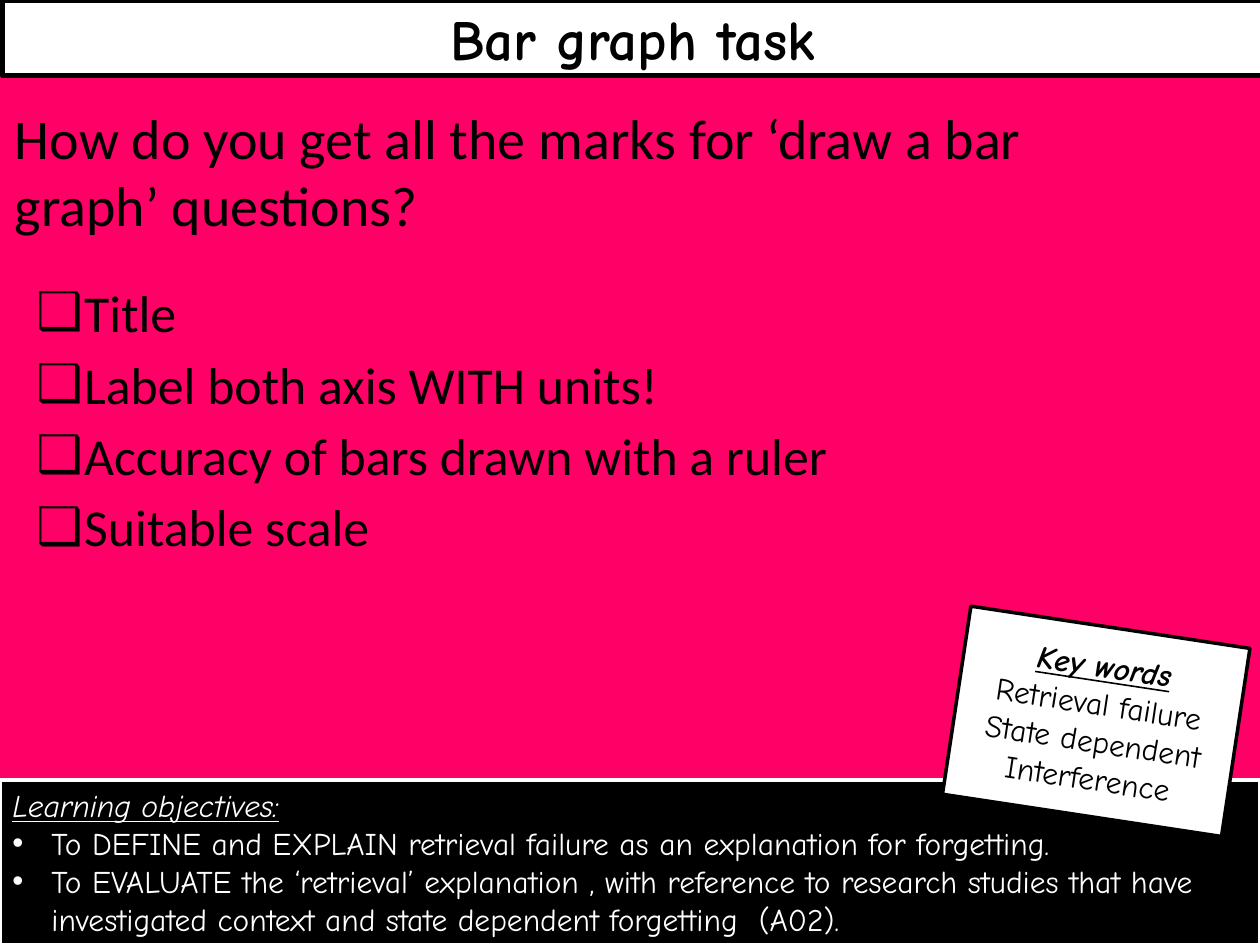
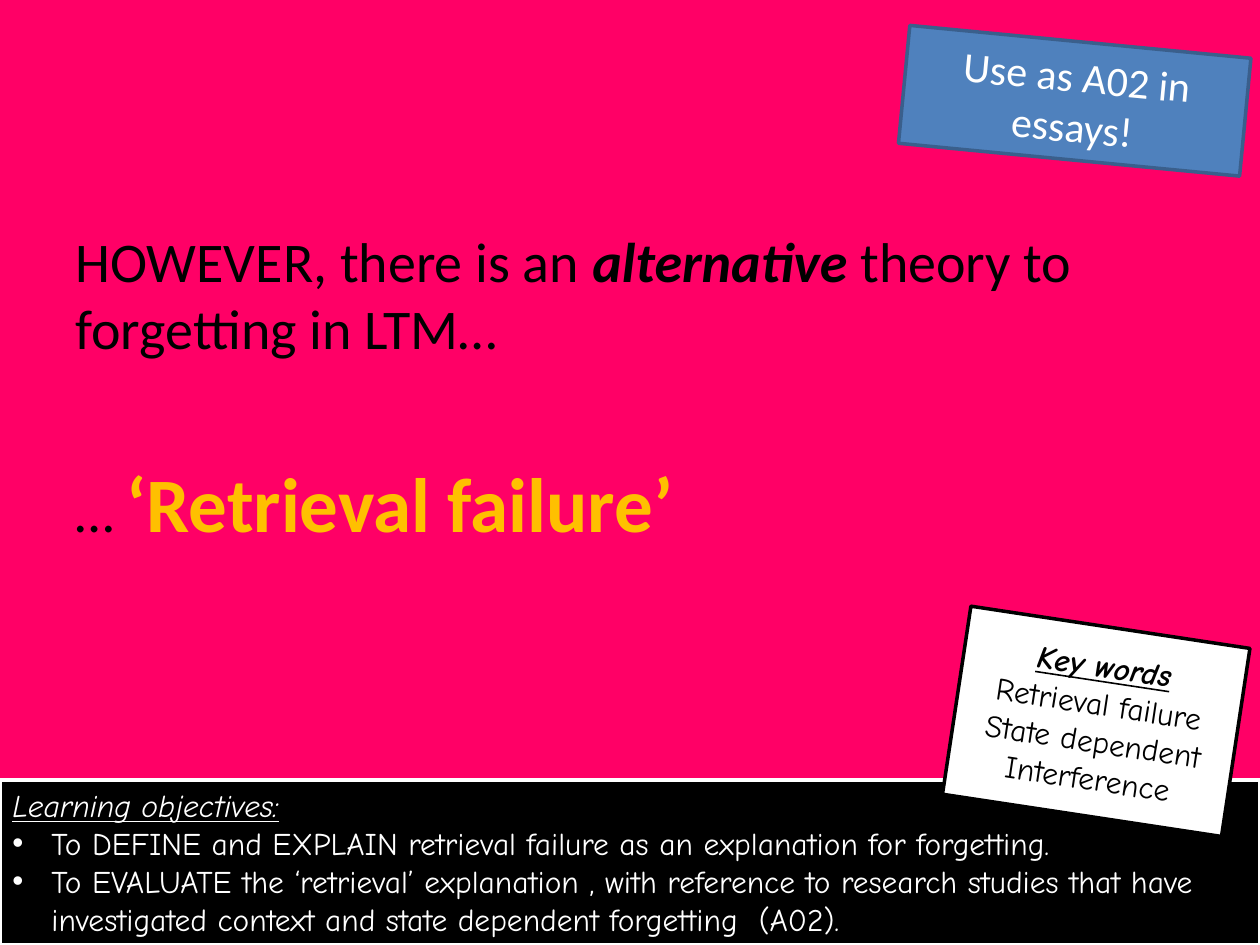
from lxml import etree
from pptx import Presentation
from pptx import util as u
from pptx.dml.color import RGBColor
from pptx.enum import shapes, text
from pptx.oxml.ns import qn

PX = 9144  # EMU in one px: 100 px to the inch

PINK = RGBColor(0xFF, 0x00, 0x66)
BLACK = RGBColor(0x00, 0x00, 0x00)
WHITE = RGBColor(0xFF, 0xFF, 0xFF)
AMBER = RGBColor(0xFF, 0xC0, 0x00)
BLUE = RGBColor(0x4F, 0x81, 0xBD)
DARK_BLUE = RGBColor(0x3A, 0x5F, 0x8C)

HAND, PLAIN = "Comic Neue", "Calibri"
TITLE_ONLY, BLANK = 5, 6

BODY = dict(name=PLAIN, size=32, color=BLACK)
CHECKLIST = dict(BODY, size=29.6)
TITLE = dict(name=HAND, size=32.4, color=BLACK, bold=True)
NOTE = dict(name=HAND, size=18, color=BLACK)
OBJECTIVE = dict(NOTE, color=WHITE)
TIP = dict(name=PLAIN, size=24, color=WHITE)

MIDDLE, TOP = text.MSO_ANCHOR.MIDDLE, text.MSO_ANCHOR.TOP
CENTER, LEFT = text.PP_ALIGN.CENTER, text.PP_ALIGN.LEFT


class Slides:
    """The deck, its shared style and the slide being filled."""

    def __init__(self):
        self.deck = Presentation()
        self.deck.slide_width, self.deck.slide_height = 1000 * PX, 750 * PX
        self.page = None

    def start(self, layout):
        self.page = self.deck.slides.add_slide(self.deck.slide_layouts[layout])
        fill = self.page.background.fill
        fill.solid()
        fill.fore_color.rgb = PINK

    def paint(self, box, fill, line, width):
        box.fill.solid()
        box.fill.fore_color.rgb = fill
        box.line.color.rgb = line
        box.line.width = u.Pt(width)

    def fill_text(self, box, paras, style, anchor=TOP, align=LEFT,
                  before=0, bullet=None, indent=0):
        """Fill a box; a para is a string or a list of (words, changes) spans.

        With a bullet, paras given as plain strings are list items.
        """
        frame = box.text_frame
        frame.word_wrap = True
        frame.auto_size = text.MSO_AUTO_SIZE.NONE
        frame.vertical_anchor = anchor
        for index, spans in enumerate(paras):
            para = frame.paragraphs[0] if index == 0 else frame.add_paragraph()
            para.alignment = align
            para.space_before = u.Pt(before)
            if isinstance(spans, str):
                if bullet:
                    self.mark(para, bullet, indent)
                spans = [(spans, {})]
            for words, changes in spans:
                span = para.add_run()
                span.text = words
                self.style_font(span.font, {**style, **changes})

    def style_font(self, font, values):
        for name, value in values.items():
            if name == "color":
                font.color.rgb = value
            else:
                setattr(font, name, u.Pt(value) if name == "size" else value)

    def mark(self, para, bullet, indent):
        props = para._p.get_or_add_pPr()
        props.set("marL", str(indent * PX))
        props.set("indent", str(-indent * PX))
        etree.SubElement(props, qn("a:buFont")).set("typeface", "Arial")
        etree.SubElement(props, qn("a:buChar")).set("char", bullet)

    def title(self, words):
        box = self.page.shapes.title
        box.left, box.top, box.width, box.height = (n * PX for n in (2, 0, 1000, 60))
        self.paint(box, WHITE, BLACK, 3)
        self.fill_text(box, [words], TITLE, MIDDLE, CENTER)

    def text_box(self, place, paras, style, **layout):
        box = self.page.shapes.add_textbox(*(n * PX for n in place))
        self.fill_text(box, paras, style, **layout)
        return box

    def panel(self, place, paras, style, fill, line, turn=0, **layout):
        box = self.page.shapes.add_shape(
            shapes.MSO_SHAPE.RECTANGLE, *(n * PX for n in place))
        box.shadow.inherit = False
        box.rotation = turn
        self.paint(box, fill, line, 2)
        self.fill_text(box, paras, style, **layout)

    def footer(self):
        """Learning objectives band with the key words card over it."""
        heading = dict(italic=True, underline=True)
        self.panel((0, 619, 1000, 131), [
            [("Learning objectives:", heading)],
            "To DEFINE and EXPLAIN retrieval failure as an explanation for forgetting.",
            "To EVALUATE the ‘retrieval’ explanation , with reference to research "
            "studies that have investigated context and state dependent "
            "forgetting  (A02).",
        ], OBJECTIVE, BLACK, WHITE, bullet="•", indent=31)
        self.panel((758, 497, 224, 151), [
            [("Key words", dict(heading, bold=True))],
            "Retrieval failure",
            "State dependent",
            "Interference",
        ], NOTE, WHITE, BLACK, turn=8.6, anchor=MIDDLE, align=CENTER)


def bar_graph_slide(slides):
    slides.start(TITLE_ONLY)
    slides.title("Bar graph task")
    slides.text_box((2, 77, 900, 141), [
        "How do you get all the marks for ‘draw a bar graph’ questions?"], BODY)
    slides.footer()
    slides.text_box((19, 218, 900, 213), [
        "Title",
        "Label both axis WITH units!",
        "Accuracy of bars drawn with a ruler",
        "Suitable scale",
    ], CHECKLIST, before=5.3, bullet="❑", indent=38)


def alternative_theory_slide(slides):
    slides.start(BLANK)
    theory = slides.text_box((50, 175, 900, 495), [
        [("HOWEVER, there is an ", {}),
         ("alternative", dict(bold=True, italic=True)),
         (" theory to forgetting in LTM…", {})],
        [("… ", {}),
         ("‘Retrieval failure’", dict(size=44, color=AMBER, bold=True))],
    ], BODY)
    theory.text_frame.paragraphs[1].space_before = u.Pt(54)
    slides.footer()
    slides.panel((717, 33, 272, 94), ["Use as A02 in essays!"], TIP,
                 BLUE, DARK_BLUE, turn=5.5, anchor=MIDDLE, align=CENTER)


def main():
    slides = Slides()
    bar_graph_slide(slides)
    alternative_theory_slide(slides)
    slides.deck.save("out.pptx")


if __name__ == "__main__":
    main()
